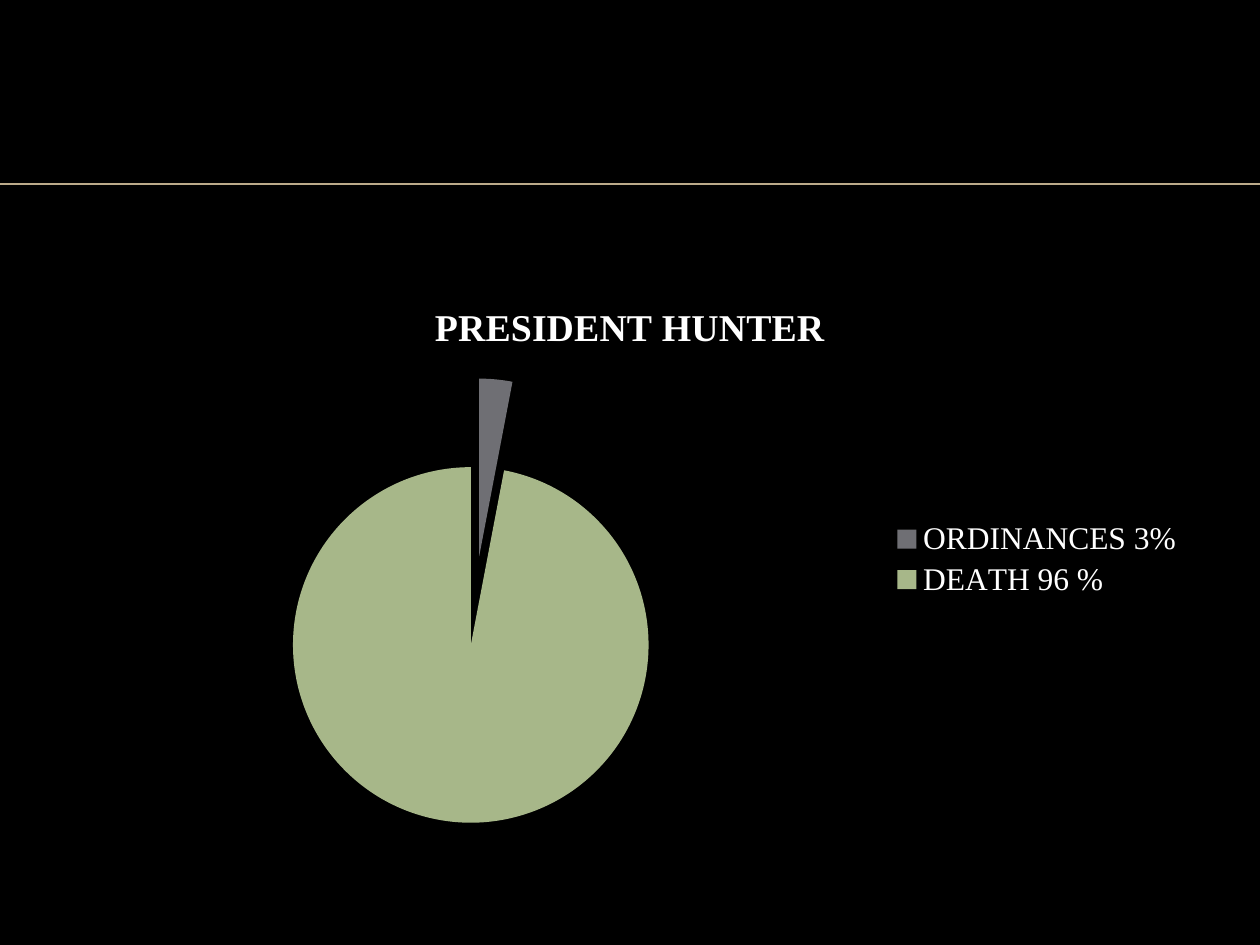
from lxml.etree import SubElement
from pptx import Presentation
from pptx.chart.data import CategoryChartData as ChartData
from pptx.dml.color import RGBColor
from pptx.enum.chart import XL_CHART_TYPE as Kind, XL_LEGEND_POSITION as Side
from pptx.enum.shapes import MSO_CONNECTOR as Link
from pptx.oxml import parse_xml
from pptx.oxml.ns import nsdecls, qn
from pptx.util import Inches, Pt

# Content
TITLE = "PRESIDENT HUNTER"
SLICES = [("ORDINANCES 3%", 3, "6F6F74"), ("DEATH 96 %", 97, "A7B789")]
BACK, RULE, TEXT = "000000", "BBAA8A", "FFFFFF"
BODY = {"name": "Times New Roman", "size": Pt(18), "bold": False}
HEAD = {**BODY, "size": Pt(21.6), "bold": True}
EXPLODE = 25


def paint(fill, hue):
    fill.solid()
    fill.fore_color.rgb = RGBColor.from_string(hue)


def style(font, look):
    for key, val in look.items():
        setattr(font, key, val)
    paint(font.fill, TEXT)


# Slide
prs = Presentation()
prs.slide_width, prs.slide_height = Inches(10), Inches(7.5)
slide = prs.slides.add_slide(prs.slide_layouts[6])
paint(slide.background.fill, BACK)

# Rule across the slide
rule = slide.shapes.add_connector(
    Link.STRAIGHT, 0, Inches(1.46), prs.slide_width, Inches(1.46))
paint(rule.line.fill, RULE)
rule.line.width = Pt(1)
SubElement(rule._element.spPr, qn("a:effectLst"))

# Pie chart
data = ChartData()
data.categories = [name for name, _, _ in SLICES]
data.add_series(TITLE, [val for _, val, _ in SLICES])
box = [Inches(n) for n in (0.5, 2.21, 9, 4.46)]
chart = slide.shapes.add_chart(Kind.PIE, *box, data).chart
style(chart.font, BODY)

# Chart title and legend
chart.has_title = True
frame = chart.chart_title.text_frame
frame.text = TITLE
style(frame.paragraphs[0].runs[0].font, HEAD)
chart.chart_title.include_in_layout = False
chart.has_legend = True
chart.legend.position = Side.RIGHT
chart.legend.include_in_layout = False
style(chart.legend.font, BODY)

# Slice colours, pulled apart
plot = chart.plots[0]
plot.vary_by_categories = True
pie = plot.series[0]
for i, (_, _, hue) in enumerate(SLICES):
    paint(pie.points[i].format.fill, hue)
gap = parse_xml(f'<c:explosion {nsdecls("c")} val="{EXPLODE}"/>')
pie._element.find(qn("c:dPt")).addprevious(gap)

prs.save("out.pptx")
